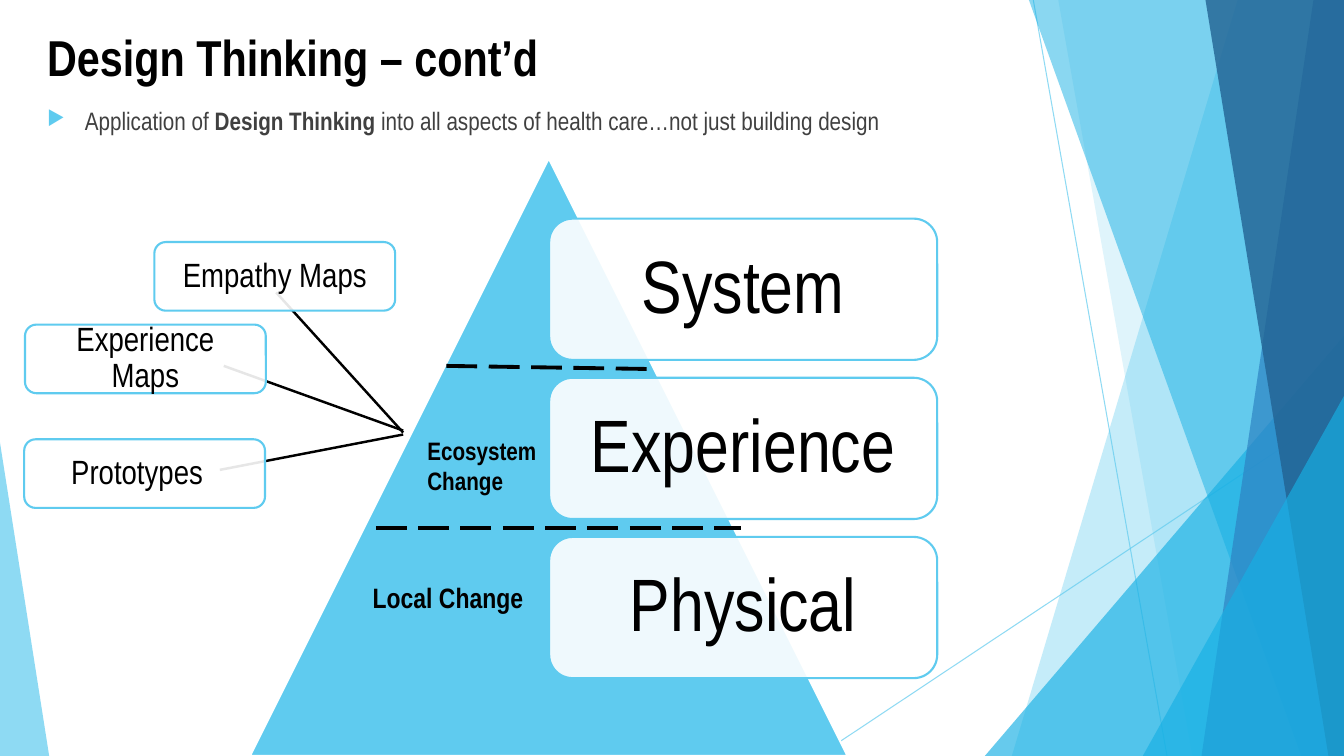
from lxml import etree
from pptx import Presentation
from pptx.dml.color import RGBColor
from pptx.enum import dml, shapes, text
from pptx.oxml import ns
from pptx.util import Cm, Pt

SKY = RGBColor(0x5F, 0xCB, 0xEF)
AZURE = RGBColor(0x17, 0xB0, 0xE4)
BLUE = RGBColor(0x2E, 0x83, 0xC3)
NAVY = RGBColor(0x22, 0x62, 0x92)
GREY = RGBColor(0x40, 0x40, 0x40)
BLACK = RGBColor(0, 0, 0)
WHITE = RGBColor(255, 255, 255)
FONT = "Arial Narrow"
WIDE, HIGH = 33.87, 19.05
KIND = shapes.MSO_SHAPE

deck = Presentation()
deck.slide_width, deck.slide_height = Cm(WIDE), Cm(HIGH)
slide = deck.slides.add_slide(deck.slide_layouts[6])
items = slide.shapes


def paint(shape, color, alpha=100, edge=None):
    shape.shadow.inherit = False
    shape.fill.solid()
    shape.fill.fore_color.rgb = color
    if alpha < 100:
        tone = shape.fill._xPr.find(".//" + ns.qn("a:srgbClr"))
        etree.SubElement(tone, ns.qn("a:alpha"), val=str(alpha * 1000))
    if edge is None:
        shape.line.fill.background()
    else:
        shape.line.color.rgb = edge
        shape.line.width = Pt(1.5)


def rule(x1, y1, x2, y2, color, width):
    line = items.add_connector(shapes.MSO_CONNECTOR.STRAIGHT, Cm(x1), Cm(y1), Cm(x2), Cm(y2))
    line.line.color.rgb = color
    line.line.width = Pt(width)
    etree.SubElement(line._element.spPr, ns.qn("a:effectLst"))
    return line


# Thin background lines
for ends in [(26.04, 0, 29.41, HIGH), (WIDE, 10.24, 20.62, HIGH)]:
    thin = rule(*ends, SKY, 0.75)
    tone = thin._element.spPr.find(".//" + ns.qn("a:srgbClr"))
    etree.SubElement(tone, ns.qn("a:alpha"), val="70000")

# Background facets on the right: x at the top (None for a triangle), x at the foot, top
for head, foot, top, color, alpha in [
    (31.19, 25.5, 0, SKY, 36),
    (26.67, 30.05, 0, SKY, 20),
    (None, 24.82, 8.46, AZURE, 66),
    (25.93, 32.79, 0, AZURE, 50),
    (33.1, 30.28, 0, BLUE, 70),
    (30.38, 33.48, 0, NAVY, 80),
    (None, 28.8, 9.98, AZURE, 66),
]:
    if head is None:
        facet = items.add_shape(KIND.ISOSCELES_TRIANGLE, Cm(foot), Cm(top),
                                Cm(WIDE - foot), Cm(HIGH - top))
        facet.adjustments[0] = 1
    else:
        pen = items.build_freeform(Cm(head), Cm(top))
        pen.add_line_segments([(Cm(WIDE), Cm(top)), (Cm(WIDE), Cm(HIGH)), (Cm(foot), Cm(HIGH))])
        facet = pen.convert_to_shape()
    paint(facet, color, alpha)

# Background wedge on the left
wedge = items.add_shape(KIND.ISOSCELES_TRIANGLE, 0, Cm(11.15), Cm(1.24), Cm(7.9))
wedge.adjustments[0] = 0
paint(wedge, SKY, 70)

# Title
box = items.add_textbox(Cm(0.94), Cm(0.38), Cm(23.88), Cm(2.06))
frame = box.text_frame
frame.word_wrap = True
frame.vertical_anchor = text.MSO_ANCHOR.MIDDLE
para = frame.paragraphs[0]
para.text = "Design Thinking – cont’d"
para.font.name, para.font.size, para.font.bold = FONT, Pt(36), True
para.font.color.rgb = BLACK

# Bulleted statement
box = items.add_textbox(Cm(0.94), Cm(2.54), Cm(23.88), Cm(10.77))
box.text_frame.word_wrap = True
para = box.text_frame.paragraphs[0]
para.space_before = Pt(10)
para.font.name, para.font.size = FONT, Pt(18)
para.font.color.rgb = GREY
for words, bold in [
    ("Application of ", False),
    ("Design Thinking ", True),
    ("into all aspects of health care…not just building design", False),
]:
    run = para.add_run()
    run.text, run.font.bold = words, bold
props = para._p.get_or_add_pPr()
props.set("marL", str(Cm(0.95)))
props.set("indent", str(-Cm(0.95)))
mark = etree.Element(ns.qn("a:buClr"))
etree.SubElement(mark, ns.qn("a:srgbClr"), val=str(SKY))
size = etree.Element(ns.qn("a:buSzPct"), val="80000")
sign = etree.Element(ns.qn("a:buChar"), char="▶")
for place, node in enumerate([mark, size, sign], 1):
    props.insert(place, node)

# Pyramid
cone = items.add_shape(KIND.ISOSCELES_TRIANGLE, Cm(6.3), Cm(3.99), Cm(15.06), Cm(15.06))
paint(cone, SKY, edge=WHITE)

# Lines from the tools to the pyramid
for ends in [
    (10.16, 10.85, 5.64, 9.22),
    (10.16, 10.95, 5.54, 11.84),
    (10.16, 10.9, 6.96, 7.37),
]:
    rule(*ends, BLACK, 1.75)

# Level cards and tool cards: label, left, top, width, height, size, right inset
cards = [(word, 13.84, 5.51 + 4.01 * row, 9.78, 3.56, 53, 0.56)
         for row, word in enumerate(["System", "Experience", "Physical"])]
cards += [(word, left, top, 6.07, 1.73, 24, inset) for word, left, top, inset in [
    ("Empathy Maps", 3.89, 6.1, 0.56),
    ("Experience Maps", 0.63, 8.18, 0.56),
    ("Prototypes", 0.61, 11.07, 0.94),
]]
for word, left, top, width, height, size, inset in cards:
    card = items.add_shape(KIND.ROUNDED_RECTANGLE, Cm(left), Cm(top), Cm(width), Cm(height))
    paint(card, WHITE, 90, SKY)
    frame = card.text_frame
    frame.word_wrap = True
    frame.vertical_anchor = text.MSO_ANCHOR.MIDDLE
    frame.margin_left = frame.margin_top = frame.margin_bottom = Cm(0.56)
    frame.margin_right = Cm(inset)
    para = frame.paragraphs[0]
    para.text = word
    para.alignment = text.PP_ALIGN.CENTER
    para.line_spacing = 0.9
    para.font.name, para.font.size = FONT, Pt(size)
    para.font.color.rgb = BLACK

# Dashed borders between levels
for ends in [(9.47, 13.31, 18.67, 13.31), (11.25, 9.22, 16.48, 9.3)]:
    rule(*ends, BLACK, 2.75).line.dash_style = dml.MSO_LINE.LONG_DASH

# Change labels
for word, left, top, height, size in [
    ("Local Change", 9.14, 14.5, 1.12, 20),
    ("Ecosystem Change", 10.52, 10.85, 1.8, 18),
]:
    box = items.add_textbox(Cm(left), Cm(top), Cm(4.72), Cm(height))
    box.text_frame.word_wrap = True
    para = box.text_frame.paragraphs[0]
    para.text = word
    para.font.name, para.font.size, para.font.bold = FONT, Pt(size), True
    para.font.color.rgb = BLACK

deck.save("out.pptx")
